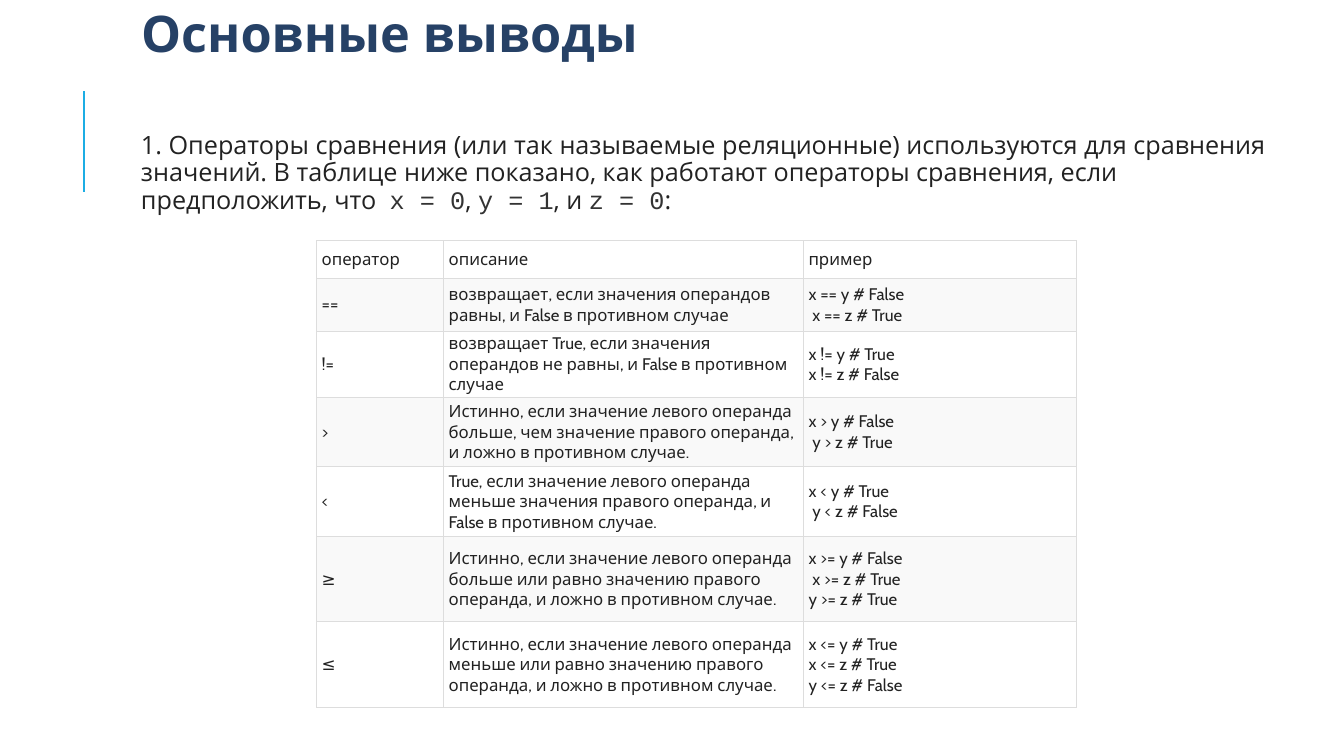
from lxml.etree import SubElement
from pptx import Presentation
from pptx.dml.color import RGBColor
from pptx.enum.shapes import MSO_CONNECTOR as Connector
from pptx.enum.text import MSO_ANCHOR as Anchor, MSO_AUTO_SIZE as AutoSize, PP_ALIGN as Align
from pptx.oxml.ns import qn
from pptx.util import Inches, Pt

COLORS = {
    "title": "264166",
    "text": "222222",
    "code": "333333",
    "accent": "1CADE4",
    "border": "DDDDDD",
    "plain": "FFFFFF",
    "band": "F9F9F9",
}
SANS, MONO, TABLE_FONT = "Open Sans", "Courier New", "Cabin"

INTRO = [
    ("1. Операторы сравнения (или так называемые реляционные) используются для "
     "сравнения значений. В таблице ниже показано, как работают операторы "
     "сравнения, если предположить, что  ", SANS, "text"),
    ("x = 0", MONO, "code"),
    (", ", SANS, "text"),
    ("y = 1", MONO, "code"),
    (", и ", SANS, "text"),
    ("z = 0", MONO, "code"),
    (":", SANS, "text"),
]
COLUMN_WIDTHS = [1.26, 3.57, 2.71]
ROW_HEIGHTS = [0.37, 0.53, 0.53, 0.69, 0.69, 0.85, 0.85]
OPERATORS = [
    ("оператор", "описание", "пример"),
    ("==",
     "возвращает, если значения операндов равны, и False в противном случае",
     "x == y # False\n x == z # True"),
    ("!=",
     "возвращает True, если значения операндов не равны, и False в противном случае",
     "x != y # True\nx != z # False"),
    (">",
     "Истинно, если значение левого операнда больше, чем значение правого "
     "операнда, и ложно в противном случае.",
     "x > y # False\n y > z # True"),
    ("<",
     "True, если значение левого операнда меньше значения правого операнда, "
     "и False в противном случае.",
     "x < y # True\n y < z # False"),
    ("≥",
     "Истинно, если значение левого операнда больше или равно значению правого "
     "операнда, и ложно в противном случае.",
     "x >= y # False\n x >= z # True\ny >= z # True"),
    ("≤",
     "Истинно, если значение левого операнда меньше или равно значению правого "
     "операнда, и ложно в противном случае.",
     "x <= y # True\nx <= z # True\ny <= z # False"),
]


def add_span(para, text, font, size, color, bold=False):
    """Append one formatted run to a paragraph."""
    span = para.add_run()
    span.text = text
    span.font.name = font
    span.font.size = Pt(size)
    span.font.bold = bold
    span.font.color.rgb = RGBColor.from_string(COLORS[color])


def prepare_frame(frame):
    """Make a text frame wrap from its top and return its first paragraph."""
    frame.word_wrap = True
    frame.auto_size = AutoSize.NONE
    frame.vertical_anchor = Anchor.TOP
    para = frame.paragraphs[0]
    para.alignment = Align.LEFT
    para.line_spacing = 0.9
    return para


def place_title(page, left, top, width, height):
    """Move the title placeholder and fill it."""
    title = page.shapes.title
    title.left, title.top = Inches(left), Inches(top)
    title.width, title.height = Inches(width), Inches(height)
    add_span(prepare_frame(title.text_frame), "Основные выводы", SANS, 36, "title", True)


def add_intro(page, left, top, width, height):
    """Add the introductory paragraph with inline code."""
    box = page.shapes.add_textbox(Inches(left), Inches(top), Inches(width), Inches(height))
    para = prepare_frame(box.text_frame)
    for text, font, color in INTRO:
        add_span(para, text, font, 18, color)


def add_accent(page, left, top, height):
    """Add the vertical accent line."""
    line = page.shapes.add_connector(
        Connector.STRAIGHT, Inches(left), Inches(top + height), Inches(left), Inches(top))
    line.line.color.rgb = RGBColor.from_string(COLORS["accent"])
    line.line.width = Pt(1.5)
    SubElement(line._element.spPr, qn("a:effectLst"))


def add_borders(cell):
    """Give a cell a thin line on all four sides."""
    properties = cell._tc.get_or_add_tcPr()
    for side in ("a:lnL", "a:lnR", "a:lnT", "a:lnB"):
        edge = SubElement(properties, qn(side), w=str(Pt(0.75)))
        fill = SubElement(edge, qn("a:solidFill"))
        SubElement(fill, qn("a:srgbClr"), val=COLORS["border"])


def fill_cell(cell, text, color):
    """Format a table cell and write one paragraph per line of text."""
    cell.margin_left = cell.margin_right = Inches(0.05)
    cell.margin_top = cell.margin_bottom = Inches(0.02)
    cell.vertical_anchor = Anchor.MIDDLE
    add_borders(cell)
    cell.fill.solid()
    cell.fill.fore_color.rgb = RGBColor.from_string(COLORS[color])
    frame = cell.text_frame
    for number, line in enumerate(text.split("\n")):
        para = frame.add_paragraph() if number else frame.paragraphs[0]
        add_span(para, line, TABLE_FONT, 12, "text")


def add_operator_table(page, left, top):
    """Add the table of comparison operators."""
    frame = page.shapes.add_table(
        len(ROW_HEIGHTS), len(COLUMN_WIDTHS), Inches(left), Inches(top),
        Inches(sum(COLUMN_WIDTHS)), Inches(sum(ROW_HEIGHTS)))
    table = frame.table
    table.first_row = table.horz_banding = False
    for column, width in zip(table.columns, COLUMN_WIDTHS):
        column.width = Inches(width)
    for index, (row, height) in enumerate(zip(table.rows, ROW_HEIGHTS)):
        row.height = Inches(height)
        for cell, text in zip(row.cells, OPERATORS[index]):
            fill_cell(cell, text, "band" if index % 2 else "plain")


def build_summary(deck):
    """Build the slide of main conclusions."""
    page = deck.slides.add_slide(deck.slide_layouts[5])
    add_accent(page, 0.83, 0.9, 1)
    add_operator_table(page, 3.14, 2.39)
    place_title(page, 1.3, 0.04, 11.75, 0.8)
    add_intro(page, 1.3, 1.27, 11.75, 1.02)


def main():
    """Create and save the deck."""
    deck = Presentation()
    deck.slide_width, deck.slide_height = Inches(13.33), Inches(7.5)
    build_summary(deck)
    deck.save("out.pptx")


if __name__ == "__main__":
    main()
